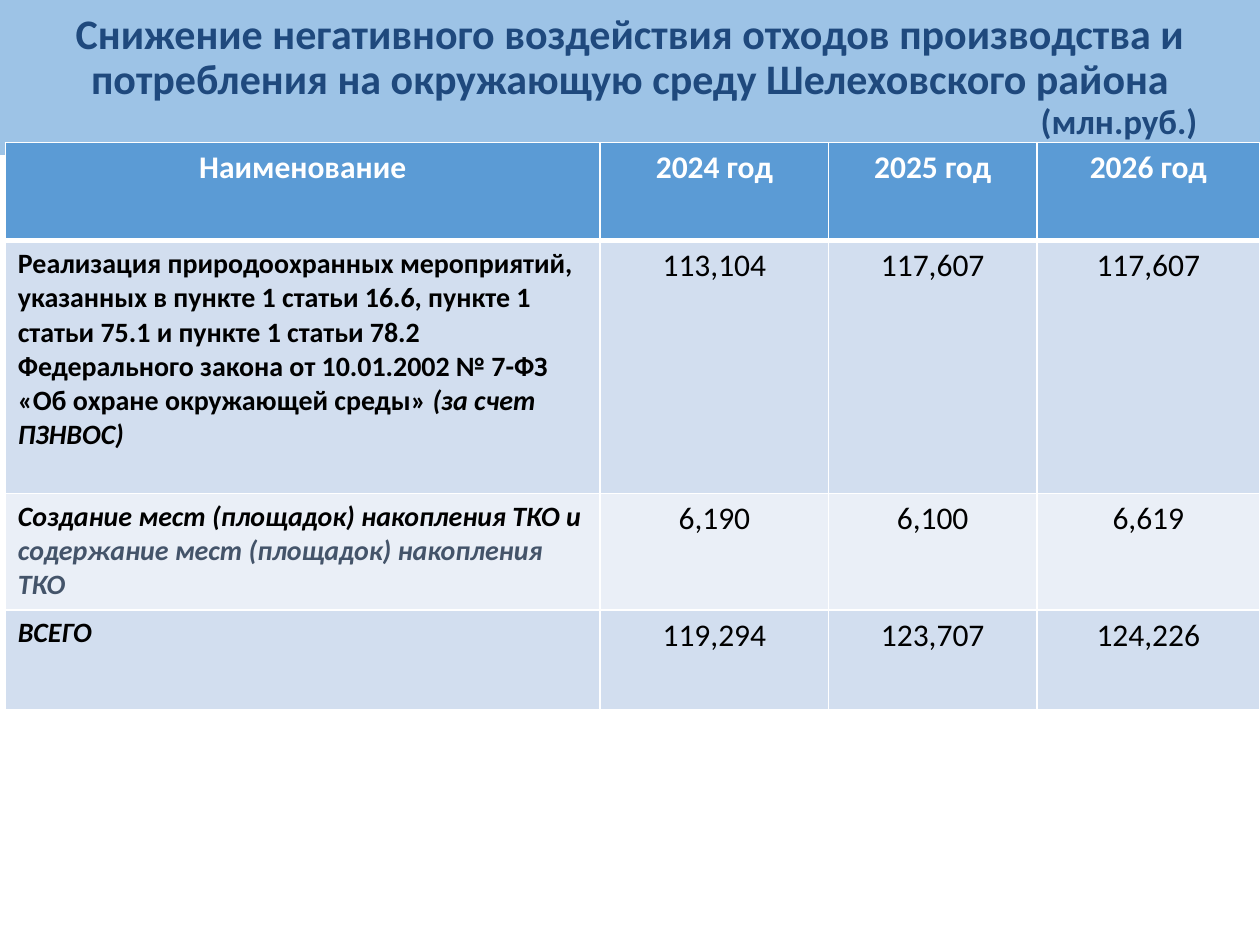
import pptx
import pptx.util
import pptx.dml.color
import pptx.enum.text
import pptx.oxml
import pptx.oxml.ns
from lxml import etree

Pt = pptx.util.Pt
ALIGN = pptx.enum.text.PP_ALIGN
ANCHOR = pptx.enum.text.MSO_ANCHOR


def color(value):
    return pptx.dml.color.RGBColor.from_string(value)


class BudgetSlide:
    font_name = "Calibri"
    title_color = "1F497D"
    banner_fill = "9DC3E6"
    header_fill = "5B9BD5"
    band_fills = ("D2DEEF", "EAEFF7")

    def __init__(self, presentation):
        self.slide = presentation.slides.add_slide(presentation.slide_layouts[5])

    def format_font(self, font, size, text_color, bold=False, italic=False):
        font.name = self.font_name
        font.size = Pt(size)
        font.color.rgb = color(text_color)
        font.bold = bold
        font.italic = italic

    def add_title(self, title, unit):
        shape = self.slide.shapes.title
        shape.left, shape.top, shape.width, shape.height = Pt(0), Pt(0), Pt(720), Pt(88.5)
        shape.fill.solid()
        shape.fill.fore_color.rgb = color(self.banner_fill)
        frame = shape.text_frame
        frame.auto_size = pptx.enum.text.MSO_AUTO_SIZE.NONE
        frame.word_wrap = True
        frame.vertical_anchor = ANCHOR.MIDDLE
        frame.text = f"{title}\n{unit}"
        for paragraph, size in zip(frame.paragraphs, (24, 20)):
            paragraph.alignment = ALIGN.CENTER
            paragraph.line_spacing = 0.9
            self.format_font(paragraph.font, size, self.title_color, bold=True)
        frame.paragraphs[1]._p.get_or_add_pPr().set("marL", str(Pt(559)))

    def add_borders(self, cell, bottom_width):
        properties = cell._tc.get_or_add_tcPr()
        widths = {"lnL": 1, "lnR": 1, "lnT": 1, "lnB": bottom_width}
        for position, (side, width) in enumerate(widths.items()):
            line = pptx.oxml.parse_xml(
                f'<a:{side} {pptx.oxml.ns.nsdecls("a")} w="{Pt(width)}"><a:solidFill>'
                f'<a:srgbClr val="FFFFFF"/></a:solidFill></a:{side}>')
            properties.insert(position, line)

    def fill_cell(self, cell, paragraphs, fill, size, alignment, bottom_width=1):
        cell.fill.solid()
        cell.fill.fore_color.rgb = color(fill)
        self.add_borders(cell, bottom_width)
        frame = cell.text_frame
        for index, runs in enumerate(paragraphs):
            paragraph = frame.add_paragraph() if index else frame.paragraphs[0]
            paragraph.alignment = alignment
            for text, text_color, bold, italic in runs:
                run = paragraph.add_run()
                run.text = text
                self.format_font(run.font, size, text_color, bold, italic)

    def add_table(self, headers, rows, column_widths, row_heights):
        table = self.slide.shapes.add_table(
            len(rows) + 1, len(headers), Pt(3), Pt(81.5),
            Pt(sum(column_widths)), Pt(sum(row_heights))).table
        for column, width in zip(table.columns, column_widths):
            column.width = Pt(width)
        for row, height in zip(table.rows, row_heights):
            row.height = Pt(height)
        for index, header in enumerate(headers):
            self.fill_cell(table.cell(0, index), [[(header, "FFFFFF", True, False)]],
                           self.header_fill, 18, ALIGN.CENTER, 3)
        for row_index, (name, values) in enumerate(rows, start=1):
            fill = self.band_fills[(row_index - 1) % 2]
            self.fill_cell(table.cell(row_index, 0), name, fill, 16, ALIGN.LEFT)
            for column_index, value in enumerate(values, start=1):
                self.fill_cell(table.cell(row_index, column_index),
                               [[(value, "000000", False, False)]], fill, 18, ALIGN.CENTER)


def main():
    presentation = pptx.Presentation()
    presentation.slide_width, presentation.slide_height = Pt(720), Pt(540)
    budget = BudgetSlide(presentation)
    budget.add_title("Снижение негативного воздействия отходов производства и "
                     "потребления на окружающую среду Шелеховского района", "(млн.руб.)")
    measures = [[
        ("Реализация природоохранных мероприятий, указанных в пункте 1 статьи 16.6, "
         "пункте 1 статьи 75.1 и пункте 1 статьи 78.2 Федерального закона от 10.01.2002 "
         "№ 7-ФЗ «Об охране окружающей среды» ", "000000", True, False),
        ("(за счет ПЗНВОС)", "000000", True, True)]]
    sites = [
        [("Создание мест (площадок) накопления ТКО и", "000000", True, True)],
        [("содержание мест (площадок) накопления ТКО", "44546A", True, True)]]
    total = [[("ВСЕГО", "000000", True, True)]]
    budget.add_table(
        ["Наименование", "2024 год", "2025 год", "2026 год"],
        [(measures, ["113,104", "117,607", "117,607"]),
         (sites, ["6,190", "6,100", "6,619"]),
         (total, ["119,294", "123,707", "124,226"])],
        [340, 130.5, 119, 127.5], [56, 144.5, 66.5, 57])
    presentation.save("out.pptx")


if __name__ == "__main__":
    main()
